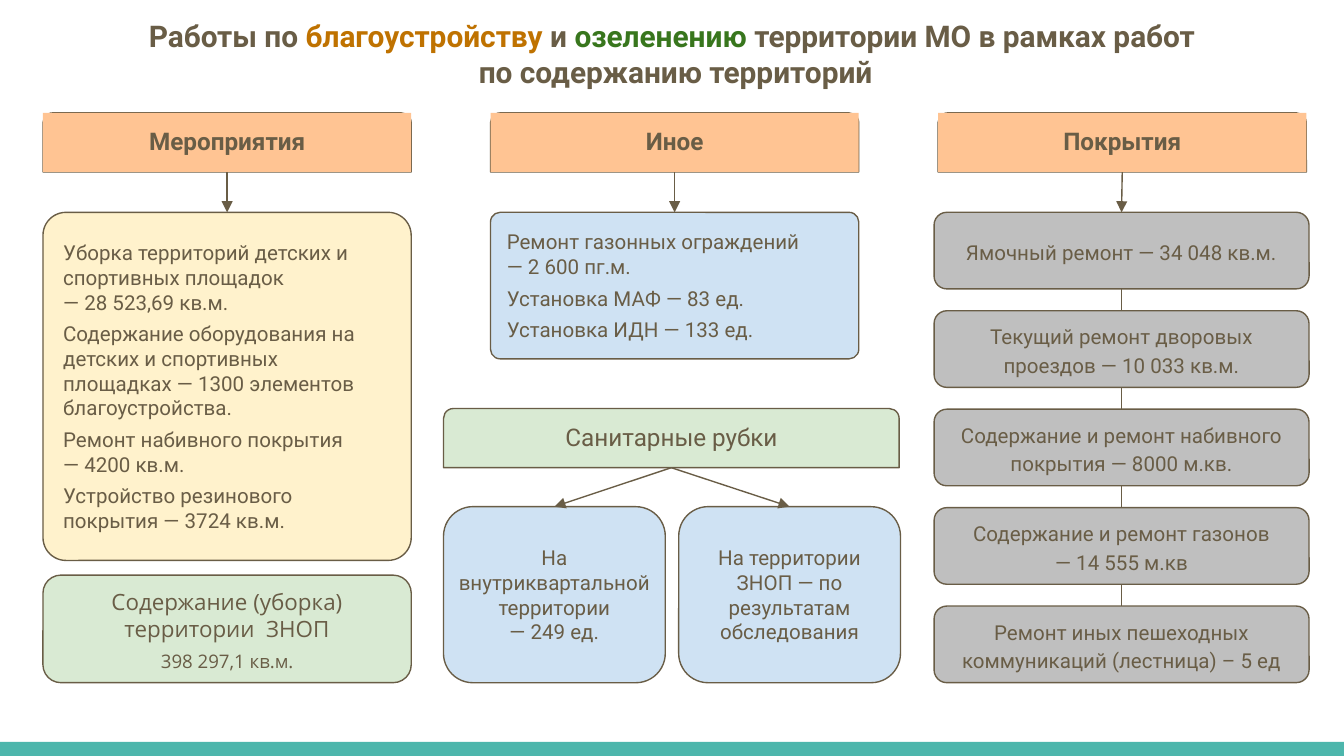
"""Build the slide on landscaping and greening works."""
from dataclasses import dataclass

import lxml.etree
import pptx
import pptx.dml.color
import pptx.enum.shapes
import pptx.enum.text
import pptx.oxml.ns
import pptx.util

Inches = pptx.util.Inches
Kind = pptx.enum.shapes.MSO_SHAPE
Align = pptx.enum.text.PP_ALIGN
Anchor = pptx.enum.text.MSO_ANCHOR
qn = pptx.oxml.ns.qn


@dataclass(frozen=True)
class Theme:
    ink: str = "695D46"
    amber: str = "BF7200"
    leaf: str = "38761D"
    white: str = "FFFFFF"
    peach: str = "FFC493"
    cream: str = "FFF2CC"
    sky: str = "CFE2F3"
    mint: str = "D9EAD3"
    grey: str = "BFBFBF"
    teal: str = "4DB6AC"
    font: str = "Roboto"
    alternate_font: str = "Open Sans"
    title_size: float = 16
    heading_size: float = 13
    area_size: float = 12
    body_size: float = 11
    note_size: float = 10
    line_width: float = 0.75


class Slide:
    def __init__(self, page, theme):
        self.page = page
        self.theme = theme

    def color(self, value):
        return pptx.dml.color.RGBColor.from_string(value)

    def paint(self, shape, fill, outlined=True):
        shape.fill.solid()
        shape.fill.fore_color.rgb = self.color(fill)
        if outlined:
            shape.line.color.rgb = self.color(self.theme.ink)
            shape.line.width = pptx.util.Pt(self.theme.line_width)
        else:
            shape.line.fill.background()

    def place(self, shape, area):
        shape.left, shape.top, shape.width, shape.height = map(Inches, area)

    def frame(self, shape, margin=0.1, anchor=Anchor.MIDDLE):
        frame = shape.text_frame
        frame.word_wrap = True
        frame.auto_size = pptx.enum.text.MSO_AUTO_SIZE.NONE
        frame.vertical_anchor = anchor
        frame.margin_left = frame.margin_right = Inches(margin)
        frame.margin_top = frame.margin_bottom = Inches(margin)
        return frame

    def style(self, para, size, bold=False, font=None, align=Align.CENTER, gap=0, spacing=1.0):
        para.alignment = align
        para.space_before = pptx.util.Pt(gap)
        para.space_after = pptx.util.Pt(0)
        para.line_spacing = spacing
        for span in para.runs:
            span.font.name = font or self.theme.font
            span.font.size = pptx.util.Pt(size)
            span.font.bold = bold
            span.font.color.rgb = self.color(self.theme.ink)

    def title(self, area, lines):
        shape = self.page.shapes.title
        self.place(shape, area)
        self.paint(shape, self.theme.white, outlined=False)
        frame = self.frame(shape)
        for index, line in enumerate(lines):
            para = frame.add_paragraph() if index else frame.paragraphs[0]
            for text, _ in line:
                para.add_run().text = text
            self.style(para, self.theme.title_size, bold=True)
            for span, (_, color) in zip(para.runs, line):
                span.font.color.rgb = self.color(color)

    def list_box(self, number, area, fill, items):
        shape = self.page.placeholders[number]
        self.place(shape, area)
        geometry = lxml.etree.SubElement(shape.element.spPr, qn("a:prstGeom"), prst="roundRect")
        lxml.etree.SubElement(geometry, qn("a:avLst"))
        shape.adjustments[0] = 0.066
        self.paint(shape, fill)
        frame = self.frame(shape)
        frame.text = "\n".join(items)
        for index, para in enumerate(frame.paragraphs):
            self.style(para, self.theme.body_size, align=Align.LEFT, gap=3.7 if index else 0)
            properties = para._p.get_or_add_pPr()
            properties.set("marL", "0")
            properties.set("indent", "0")
            lxml.etree.SubElement(properties, qn("a:buNone"))
        return shape

    def box(self, kind, area, fill, outlined=True):
        shape = self.page.shapes.add_shape(kind, *map(Inches, area))
        shape.shadow.inherit = False
        self.paint(shape, fill, outlined)
        return shape

    def text_box(self, kind, area, fill, text, size, margin=0.1, anchor=Anchor.MIDDLE,
                 outlined=True, **style):
        shape = self.box(kind, area, fill, outlined)
        frame = self.frame(shape, margin, anchor)
        frame.text = text
        for para in frame.paragraphs:
            self.style(para, size, **style)
        return shape

    def header(self, area, text):
        self.box(Kind.ROUND_2_SAME_RECTANGLE, area, self.theme.white)
        return self.text_box(Kind.RECTANGLE, area, self.theme.peach, text, self.theme.heading_size,
                             anchor=Anchor.TOP, outlined=False, bold=True)

    def link(self, upper, lower, arrow=True, glue_upper=True):
        line = self.page.shapes.add_connector(
            pptx.enum.shapes.MSO_CONNECTOR.STRAIGHT,
            upper.left + upper.width // 2, upper.top + upper.height,
            lower.left + lower.width // 2, lower.top)
        if glue_upper:
            line.begin_connect(upper, 2)
        line.end_connect(lower, 0)
        line.line.color.rgb = self.color(self.theme.ink)
        line.line.width = pptx.util.Pt(self.theme.line_width)
        properties = line.element.spPr
        if arrow:
            lxml.etree.SubElement(properties.find(qn("a:ln")), qn("a:tailEnd"), type="triangle")
        lxml.etree.SubElement(properties, qn("a:effectLst"))


def main():
    theme = Theme()
    deck = pptx.Presentation()
    deck.slide_width = Inches(10)
    deck.slide_height = deck.slide_width * 9 // 16
    slide = Slide(deck.slides.add_slide(deck.slide_layouts[3]), theme)
    columns = [0.32 + 3.33 * index for index in range(3)]
    width, first_top = 2.74, 1.58

    slide.box(Kind.RECTANGLE, (0, 5.52, 10, 0.11), theme.teal, outlined=False)
    slide.title((0, 0, 10, 0.8), [
        [("Работы по ", theme.ink), ("благоустройству", theme.amber), (" и ", theme.ink),
         ("озеленению", theme.leaf), (" территории МО в рамках работ", theme.ink)],
        [(" по содержанию территорий", theme.ink)]])
    headers = [slide.header((left, 0.84, width, 0.44), text)
               for left, text in zip(columns, ("Мероприятия", "Иное", "Покрытия"))]

    activities = slide.list_box(1, (columns[0], first_top, width, 2.59), theme.cream, [
        "Уборка территорий детских и спортивных площадок\v— 28 523,69 кв.м.",
        "Содержание оборудования на детских и спортивных площадках — 1300 элементов благоустройства.",
        "Ремонт набивного покрытия\v— 4200 кв.м.",
        "Устройство резинового покрытия — 3724 кв.м."])
    other = slide.list_box(2, (columns[1], first_top, width, 1.09), theme.sky, [
        "Ремонт газонных ограждений\v— 2 600 пг.м.",
        "Установка МАФ — 83 ед.",
        "Установка ИДН — 133 ед."])

    cleaning = slide.text_box(
        Kind.ROUNDED_RECTANGLE, (columns[0], 4.28, width, 0.8), theme.mint,
        "Содержание (уборка) территории  ЗНОП\n398 297,1 кв.м.",
        theme.area_size, margin=0.06, anchor=Anchor.TOP, font=theme.alternate_font)
    slide.style(cleaning.text_frame.paragraphs[1], theme.note_size,
                font=theme.alternate_font, gap=4)

    coverings = (
        "Ямочный ремонт — 34 048 кв.м.",
        "Текущий ремонт дворовых проездов — 10 033 кв.м.",
        "Содержание и ремонт набивного покрытия — 8000 м.кв.",
        "Содержание и ремонт газонов\v— 14 555 м.кв",
        "Ремонт иных пешеходных коммуникаций (лестница) – 5 ед")
    step = (4.51 - first_top) / (len(coverings) - 1)
    chain = [slide.text_box(Kind.ROUNDED_RECTANGLE, (6.95, first_top + index * step, 2.79, 0.57),
                            theme.grey, text, theme.body_size, spacing=1.15)
             for index, text in enumerate(coverings)]

    felling = slide.text_box(Kind.ROUND_2_SAME_RECTANGLE, (3.3, 3.04, 3.39, 0.44), theme.mint,
                             "Санитарные рубки", theme.heading_size, margin=0.08,
                             anchor=Anchor.TOP)
    for left, text in ((3.3, "На внутриквартальной территории\n— 249 ед."),
                       (5.05, "На территории ЗНОП — по результатам обследования")):
        branch = slide.text_box(Kind.ROUNDED_RECTANGLE, (left, 3.77, 1.65, 1.31), theme.sky,
                                text, theme.body_size, margin=0.03)
        slide.link(felling, branch, glue_upper=False)

    for upper, lower in zip(headers, (activities, other, chain[0])):
        slide.link(upper, lower)
    for upper, lower in zip(chain, chain[1:]):
        slide.link(upper, lower, arrow=False)
    deck.save("out.pptx")


if __name__ == "__main__":
    main()
